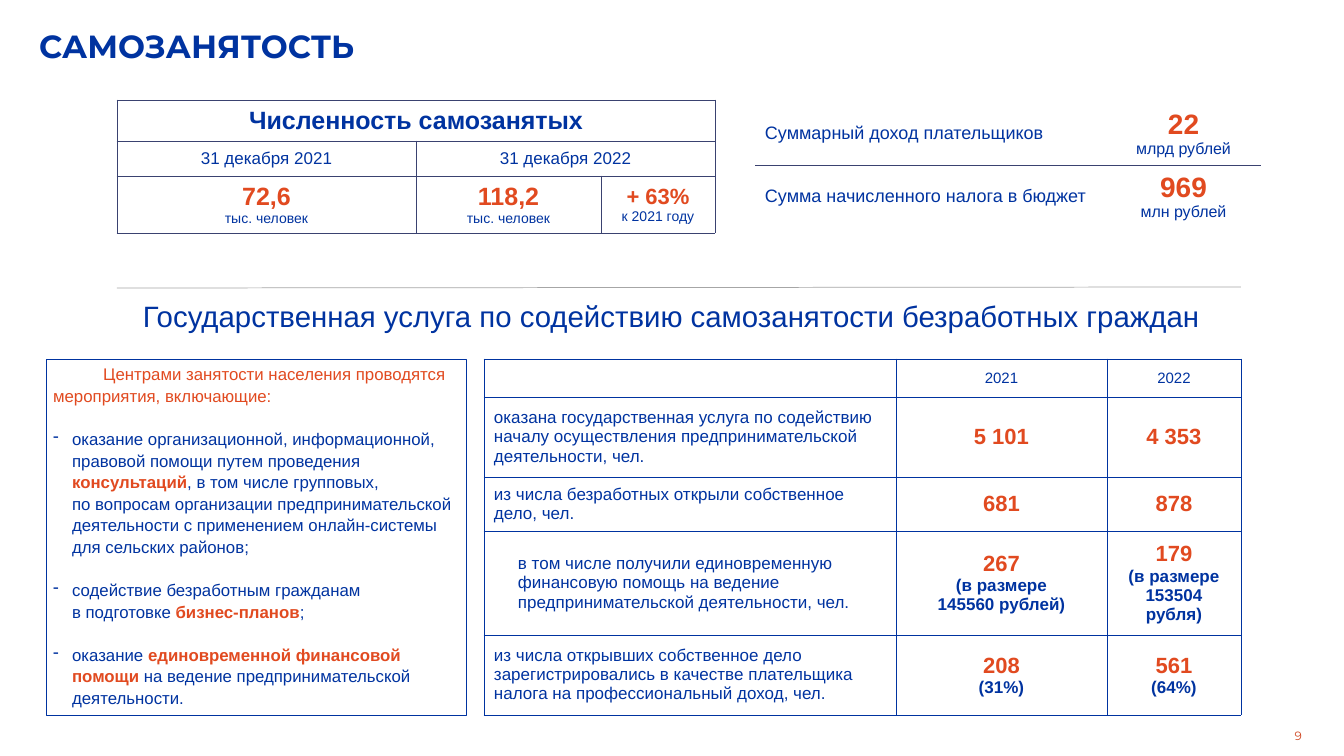
from copy import deepcopy
from dataclasses import dataclass
from typing import Any

from lxml.etree import SubElement
from pptx import Presentation
from pptx.dml.color import RGBColor
from pptx.enum.shapes import MSO_CONNECTOR as Line, MSO_SHAPE as Shape
from pptx.enum.text import MSO_ANCHOR as Anchor, PP_ALIGN as Align
from pptx.oxml.ns import qn
from pptx.util import Pt

PX = 12700
BLUE = RGBColor(0x00, 0x33, 0xA0)
ORANGE = RGBColor(0xE1, 0x4A, 0x20)
RUST = RGBColor(0xCF, 0x45, 0x20)
NAVY = RGBColor(0x3A, 0x42, 0x70)
GREY = RGBColor(0xA6, 0xA6, 0xA6)
SIDES = "LRTB"
Box = tuple[int, int, int, int]


@dataclass(frozen=True)
class Run:
    """A piece of text with its look."""
    text: str
    size: float
    color: RGBColor = BLUE
    bold: bool = False
    font: str = "Arial"


@dataclass(frozen=True)
class Cell:
    """A table cell: one run per line, and the sides that carry a border."""
    lines: tuple[Run, ...] = ()
    align: Align = Align.CENTER
    sides: str = SIDES


@dataclass(frozen=True)
class Grid:
    """A table with its column widths, row heights and merged ranges."""
    left: int
    top: int
    cols: tuple[int, ...]
    rows: tuple[int, ...]
    border: RGBColor
    cells: dict[tuple[int, int], Cell]
    merges: tuple[tuple[int, int, int], ...] = ()


@dataclass(frozen=True)
class Label:
    """A one-line text box."""
    box: Box
    run: Run
    align: Align
    anchor: Anchor = Anchor.MIDDLE
    wrap: bool = True
    inset: int = 0


@dataclass(frozen=True)
class Item:
    """A paragraph of the activities panel."""
    runs: tuple[Run, ...]
    margin: int = 19
    indent: int = -19
    bullet: str = "-"
    before: float = 21.6


def emu(lengths: tuple[int, ...]) -> list[int]:
    """Turn px into EMU."""
    return [v * PX for v in lengths]


def assign(obj: Any, values: dict[str, Any]) -> None:
    """Set attributes from a dict."""
    for name, value in values.items():
        setattr(obj, name, value)


def insets(x: int, y: int) -> dict[str, int]:
    """Give margin values for a text frame or a cell."""
    return {"margin_left": x * PX, "margin_right": x * PX,
            "margin_top": y * PX, "margin_bottom": y * PX}


def add_run(p: Any, run: Run) -> None:
    """Add a run, with line breaks where its text has them."""
    for i, part in enumerate(run.text.split("\n")):
        if i:
            p.add_line_break()
            p._p[-1].append(deepcopy(p.runs[-1]._r.rPr))
        r = p.add_run()
        r.text = part
        assign(r.font, {"name": run.font, "size": Pt(run.size), "bold": run.bold})
        r.font.color.rgb = run.color


def add_label(s: Any, label: Label) -> None:
    """Draw a text box."""
    tf = s.shapes.add_textbox(*emu(label.box)).text_frame
    assign(tf, {"word_wrap": label.wrap, "vertical_anchor": label.anchor,
                **insets(label.inset, label.inset // 2)})
    p = tf.paragraphs[0]
    p.alignment = label.align
    add_run(p, label.run)


def add_border(tc: Any, sides: str, color: RGBColor) -> None:
    """Give a table cell its border lines."""
    pr = tc.get_or_add_tcPr()
    for i, side in enumerate(SIDES):
        ln = SubElement(pr, qn(f"a:ln{side}"), w=str(PX))
        pr.insert(i, ln)
        if side in sides:
            SubElement(SubElement(ln, qn("a:solidFill")), qn("a:srgbClr"), val=str(color))
        else:
            SubElement(ln, qn("a:noFill"))


def add_grid(s: Any, grid: Grid) -> None:
    """Draw a table."""
    box = (grid.left, grid.top, sum(grid.cols), sum(grid.rows))
    table = s.shapes.add_table(len(grid.rows), len(grid.cols), *emu(box)).table
    assign(table, {"first_row": False, "horz_banding": False})
    for col, width in zip(table.columns, emu(grid.cols)):
        col.width = width
    for row, height in zip(table.rows, emu(grid.rows)):
        row.height = height
    for row, first, last in grid.merges:
        table.cell(row, first).merge(table.cell(row, last))
    for r in range(len(grid.rows)):
        for c in range(len(grid.cols)):
            cell, content = table.cell(r, c), grid.cells.get((r, c), Cell())
            assign(cell, {"vertical_anchor": Anchor.MIDDLE, **insets(10, 5)})
            cell.fill.background()
            add_border(cell._tc, content.sides, grid.border)
            for i, run in enumerate(content.lines):
                tf = cell.text_frame
                p = tf.add_paragraph() if i else tf.paragraphs[0]
                p.alignment = content.align
                add_run(p, run)


def add_panel(s: Any, box: Box, items: list[Item]) -> None:
    """Draw the framed list of activities."""
    sp = s.shapes.add_shape(Shape.RECTANGLE, *emu(box))
    sp.shadow.inherit = False
    sp.fill.background()
    sp.line.color.rgb = BLUE
    sp.line.width = Pt(0.75)
    tf = sp.text_frame
    assign(tf, {"word_wrap": True, "vertical_anchor": Anchor.TOP})
    for i, item in enumerate(items):
        p = tf.add_paragraph() if i else tf.paragraphs[0]
        assign(p, {"alignment": Align.LEFT, "line_spacing": 1.07, "space_before": Pt(item.before)})
        pr = p._p.get_or_add_pPr()
        pr.set("marL", str(item.margin * PX))
        pr.set("indent", str(item.indent * PX))
        if item.bullet:
            SubElement(pr, qn("a:buChar"), char=item.bullet)
        for run in item.runs:
            add_run(p, run)


def add_rule(s: Any, ends: Box) -> None:
    """Draw the thin dividing line."""
    line = s.shapes.add_connector(Line.STRAIGHT, *emu(ends))
    line.line.color.rgb = GREY
    line.line.width = Pt(0.75)
    SubElement(line._element.spPr, qn("a:effectLst"))


def figure(value: str, *notes: str, size: int = 22, note: int = 17, bold: bool = True,
           sides: str = SIDES) -> Cell:
    """Make a cell with an orange figure above its notes."""
    return Cell((Run(value, size, ORANGE, True), *(Run(n, note, BLUE, bold) for n in notes)),
                sides=sides)


def caption(text: str, size: int = 17, sides: str = SIDES) -> Cell:
    """Make a left-aligned cell of plain text."""
    return Cell((Run(text, size),), Align.LEFT, sides)


def plain(text: str) -> Run:
    """Make a blue run of the panel."""
    return Run(text, 16.8)


def strong(text: str) -> Run:
    """Make a bold orange run of the panel."""
    return Run(text, 16.8, ORANGE, True)


LABELS = [
    Label((1007, 716, 302, 40), Run("9", 12, RUST, font="Montserrat"), Align.RIGHT, inset=7),
    Label((39, 17, 1142, 58), Run("САМОЗАНЯТОСТЬ", 32, BLUE, True, "Montserrat"), Align.LEFT),
    Label((130, 295, 1083, 43),
          Run("Государственная услуга по содействию самозанятости безработных граждан", 29.4),
          Align.CENTER, Anchor.TOP, False, 7),
]
GRIDS = [
    Grid(117, 100, (299, 185, 114), (41, 35, 57), NAVY, {
        (0, 0): Cell((Run("Численность самозанятых", 25, bold=True),)),
        (1, 0): Cell((Run("31 декабря 2021", 17),)),
        (1, 1): Cell((Run("31 декабря 2022", 17),)),
        (2, 0): figure("72,6", "тыс. человек", size=25, note=14, bold=False),
        (2, 1): figure("118,2", "тыс. человек", size=25, note=14, bold=False),
        (2, 2): figure("+ 63%", "к 2021 году", note=14, bold=False),
    }, ((0, 0, 2), (1, 1, 2))),
    Grid(755, 102, (351, 155), (63, 63), NAVY, {
        (0, 0): caption("Суммарный доход плательщиков", 18, "B"),
        (0, 1): figure("22", "млрд рублей", size=28, note=16, bold=False, sides="B"),
        (1, 0): caption("Сумма начисленного налога в бюджет", 18, "T"),
        (1, 1): figure("969", "млн рублей", size=28, note=16, bold=False, sides="T"),
    }),
    Grid(484, 359, (24, 388, 211, 134), (38, 80, 54, 104, 80), BLUE, {
        (0, 2): Cell((Run("2021", 15),)),
        (0, 3): Cell((Run("2022", 15),)),
        (1, 0): caption("оказана государственная услуга по содействию началу осуществления "
                        "предпринимательской деятельности, чел."),
        (1, 2): figure("5 101"),
        (1, 3): figure("4 353"),
        (2, 0): caption("из числа безработных открыли собственное дело, чел."),
        (2, 2): figure("681"),
        (2, 3): figure("878"),
        (3, 0): Cell(sides="LTB"),
        (3, 1): caption("в том числе получили единовременную финансовую помощь на ведение "
                        "предпринимательской деятельности, чел.", sides="RTB"),
        (3, 2): figure("267", "(в размере", "145560 рублей)"),
        (3, 3): figure("179", "(в размере", "153504 рубля)"),
        (4, 0): caption("из числа открывших собственное дело зарегистрировались в качестве "
                        "плательщика налога на профессиональный доход, чел."),
        (4, 2): figure("208", "(31%)"),
        (4, 3): figure("561", "(64%)"),
    }, ((0, 0, 1), (1, 0, 1), (2, 0, 1), (4, 0, 1))),
]
ACTIVITIES = [
    Item((Run("Центрами занятости населения проводятся мероприятия, включающие:", 16.8, ORANGE),),
         0, 50, "", 0),
    Item((plain("оказание организационной, информационной, правовой помощи путем проведения "),
          strong("консультаций"),
          plain(", в том числе групповых,\nпо вопросам организации предпринимательской деятельности "
                "с применением онлайн-системы для сельских районов;"))),
    Item((plain("содействие безработным гражданам\nв подготовке "), strong("бизнес-планов"),
          plain(";"))),
    Item((plain("оказание "), strong("единовременной финансовой помощи "),
          plain("на ведение предпринимательской деятельности."))),
]


def main() -> None:
    """Build the slide and save it."""
    prs = Presentation()
    assign(prs, {"slide_width": 1344 * PX, "slide_height": 756 * PX})
    s = prs.slides.add_slide(prs.slide_layouts[6])
    for label in LABELS:
        add_label(s, label)
    add_rule(s, (1241, 287, 117, 288))
    for grid in GRIDS:
        add_grid(s, grid)
    add_panel(s, (46, 359, 420, 356), ACTIVITIES)
    prs.save("out.pptx")


if __name__ == "__main__":
    main()
